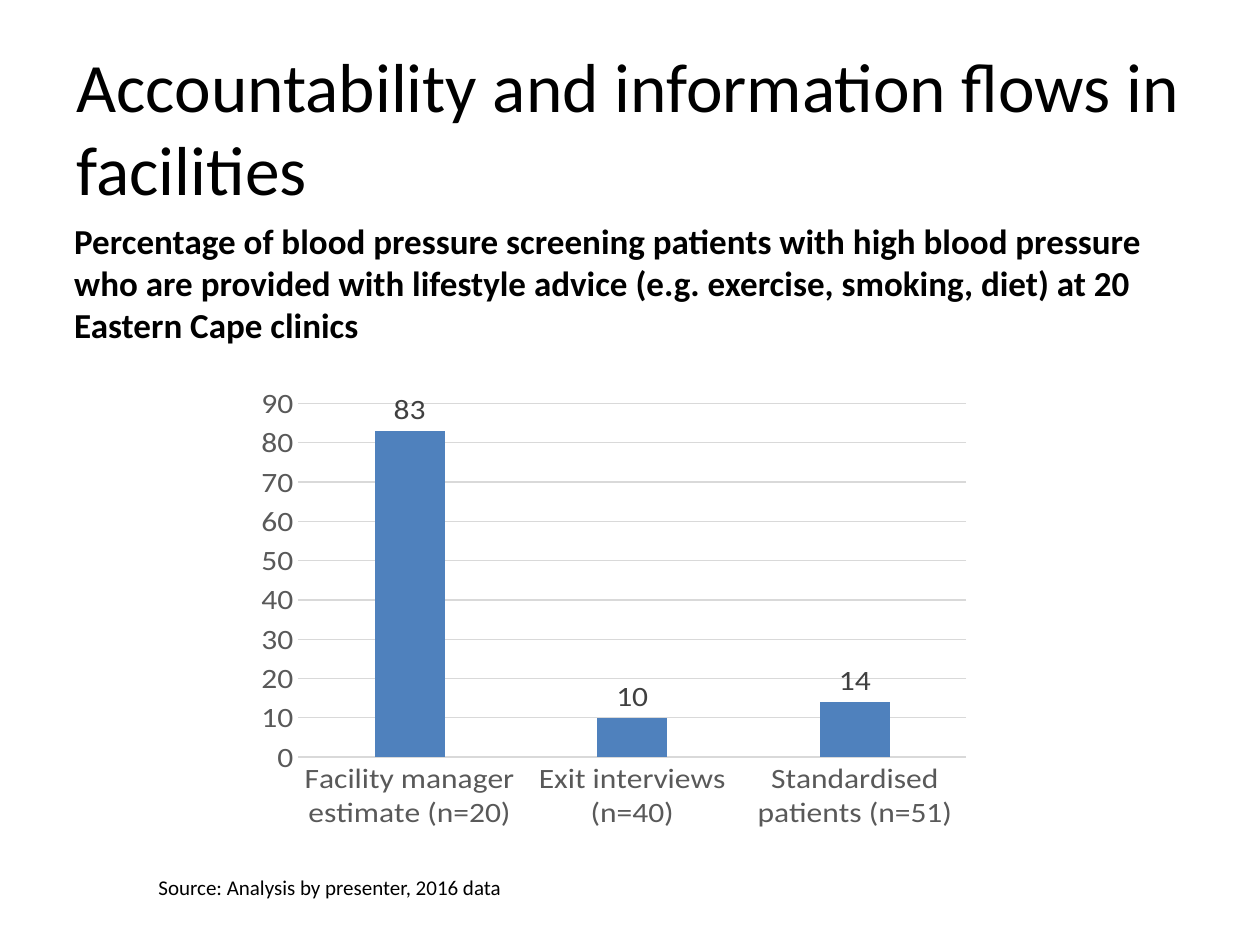
"""Build the slide on accountability and information flows in facilities."""
from pptx import Presentation
from pptx.chart.data import CategoryChartData
from pptx.dml.color import RGBColor
from pptx.enum.chart import XL_CHART_TYPE, XL_LABEL_POSITION, XL_TICK_MARK
from pptx.enum.text import MSO_ANCHOR
from pptx.oxml import parse_xml
from pptx.oxml.ns import nsdecls
from pptx.util import Pt

BLACK = RGBColor(0x00, 0x00, 0x00)
AXIS_GREY = RGBColor(0x59, 0x59, 0x59)
LABEL_GREY = RGBColor(0x40, 0x40, 0x40)
GRID_GREY = RGBColor(0xD9, 0xD9, 0xD9)
BAR_BLUE = RGBColor(0x4F, 0x81, 0xBD)
PLOT_LAYOUT = {"x": 0.076, "y": 0.051, "w": 0.922, "h": 0.89}


def style_font(font, size, color, bold=False):
    style = {"name": "Calibri", "size": Pt(size), "bold": bold}
    for attribute, value in style.items():
        setattr(font, attribute, value)
    font.color.rgb = color


def style_line(line):
    line.color.rgb = GRID_GREY
    line.width = Pt(0.75)


def add_text(slide, box, text, size, bold=False):
    frame = slide.shapes.add_textbox(*map(Pt, box)).text_frame
    frame.word_wrap = True
    frame.vertical_anchor = MSO_ANCHOR.TOP
    run = frame.paragraphs[0].add_run()
    run.text = text
    style_font(run.font, size, BLACK, bold)


def place_plot(chart):
    targets = '<c:layoutTarget val="inner"/><c:xMode val="edge"/><c:yMode val="edge"/>'
    sizes = "".join(f'<c:{key} val="{value}"/>' for key, value in PLOT_LAYOUT.items())
    layout = parse_xml(
        f'<c:layout {nsdecls("c")}><c:manualLayout>{targets}{sizes}'
        "</c:manualLayout></c:layout>"
    )
    plot_area = chart.plots[0]._element.getparent()
    for old_layout in plot_area.findall(layout.tag):
        plot_area.remove(old_layout)
    plot_area.insert(0, layout)


def style_axes(chart):
    for axis in (chart.category_axis, chart.value_axis):
        axis.major_tick_mark = axis.minor_tick_mark = XL_TICK_MARK.NONE
        style_font(axis.tick_labels.font, 18, AXIS_GREY)
    style_line(chart.category_axis.format.line)
    scale = {"minimum_scale": 0, "maximum_scale": 90, "major_unit": 10}
    for attribute, value in scale.items():
        setattr(chart.value_axis, attribute, value)
    chart.value_axis.format.line.fill.background()
    style_line(chart.value_axis.major_gridlines.format.line)


def add_advice_chart(slide, box):
    advice = CategoryChartData()
    advice.categories = [
        "Facility manager estimate (n=20)",
        "Exit interviews (n=40)",
        "Standardised patients (n=51)",
    ]
    advice.add_series("Series 1", (83, 10, 14))
    chart = slide.shapes.add_chart(
        XL_CHART_TYPE.COLUMN_CLUSTERED, *map(Pt, box), advice
    ).chart
    chart.has_title = chart.has_legend = False
    style_font(chart.font, 18, BLACK)
    style_axes(chart)
    bars = chart.plots[0]
    layout = {"gap_width": 219, "overlap": -27, "vary_by_categories": False}
    for attribute, value in layout.items():
        setattr(bars, attribute, value)
    fill = bars.series[0].format.fill
    fill.solid()
    fill.fore_color.rgb = BAR_BLUE
    labels = bars.series[0].data_labels
    labels.show_value = True
    labels.position = XL_LABEL_POSITION.OUTSIDE_END
    style_font(labels.font, 18, LABEL_GREY)
    place_plot(chart)


def main():
    presentation = Presentation()
    presentation.slide_width, presentation.slide_height = Pt(720), Pt(540)
    slide = presentation.slides.add_slide(presentation.slide_layouts[6])
    add_text(
        slide,
        (35.3, 121.7, 661, 80),
        "Percentage of blood pressure screening patients with high blood pressure "
        "who are provided with lifestyle advice (e.g. exercise, smoking, diet) "
        "at 20 Eastern Cape clinics",
        20,
        bold=True,
    )
    add_advice_chart(slide, (139, 219, 414, 255))
    add_text(
        slide,
        (36.7, 21, 648, 90),
        "Accountability and information flows in facilities",
        39.6,
    )
    add_text(
        slide, (83.5, 496, 263.5, 36.7), "Source: Analysis by presenter, 2016 data", 12
    )
    presentation.save("out.pptx")


if __name__ == "__main__":
    main()
